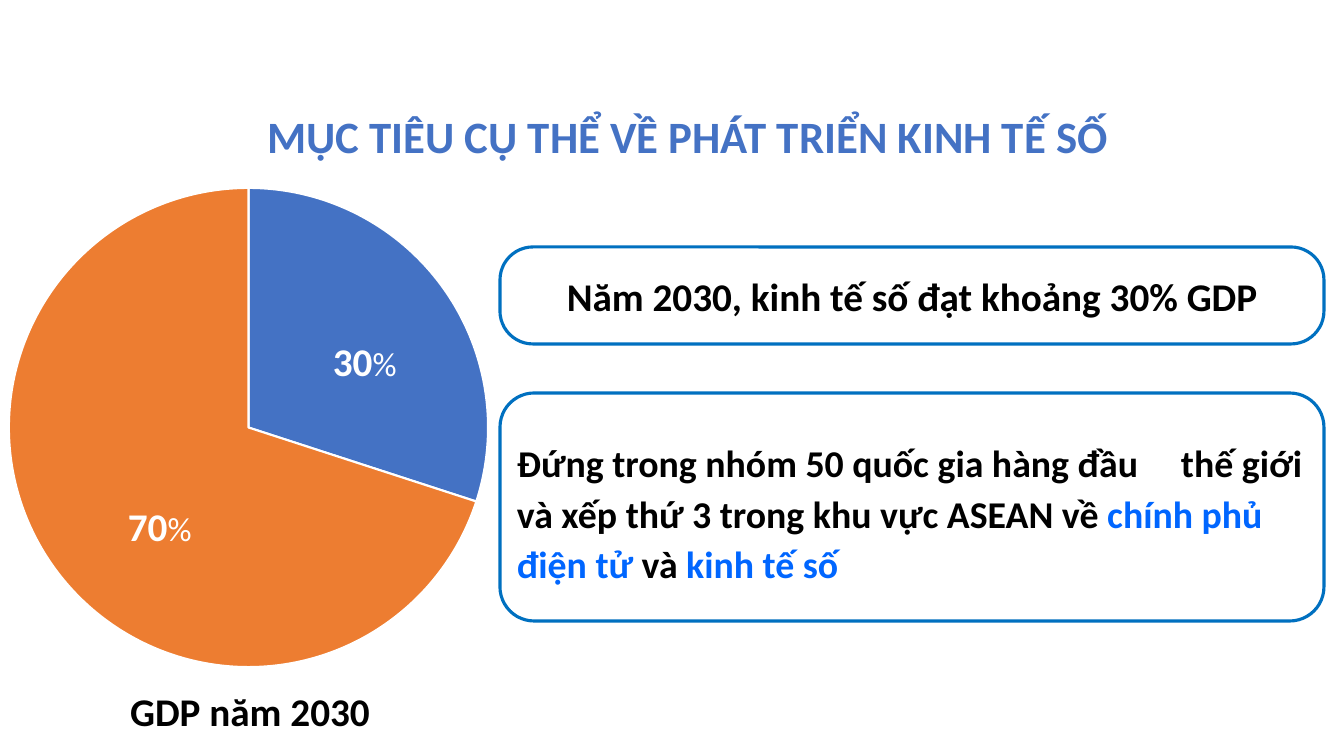
import pptx
import pptx.chart.data
import pptx.dml.color
import pptx.enum.chart
import pptx.enum.shapes
import pptx.enum.text
import pptx.oxml
import pptx.oxml.ns
import pptx.util

HUES = {
    "blue": "4472C4",
    "orange": "ED7D31",
    "edge": "0070C0",
    "link": "0066FF",
    "black": "000000",
    "white": "FFFFFF",
}
SCALE = 914400 / 100.8


def px(count):
    return pptx.util.Emu(round(count * SCALE))


def hue(name):
    return pptx.dml.color.RGBColor.from_string(HUES[name])


class Deck:
    face = "Calibri"

    def __init__(self, wide, high):
        self.show = pptx.Presentation()
        self.show.slide_width = px(wide)
        self.show.slide_height = px(high)
        self.slide = self.show.slides.add_slide(self.show.slide_layouts[6])

    def pie(self, box, parts):
        data = pptx.chart.data.CategoryChartData()
        data.categories = [str(rank + 1) for rank in range(len(parts))]
        data.add_series("Series 1", [value for value, _ in parts])
        kind = pptx.enum.chart.XL_CHART_TYPE.PIE
        chart = self.slide.shapes.add_chart(kind, *map(px, box), data).chart
        chart.has_legend = False
        chart.has_title = False
        chart.font.name = self.face
        chart.font.size = pptx.util.Pt(10)
        chart.font.color.rgb = hue("black")
        plot = chart.plots[0]
        plot.vary_by_categories = True
        for rank, (_, name) in enumerate(parts):
            style = plot.series[0].points[rank].format
            style.fill.solid()
            style.fill.fore_color.rgb = hue(name)
            style.line.color.rgb = hue("white")
            style.line.width = pptx.util.Pt(1.5)

    def frame(self, box, bend):
        kind = pptx.enum.shapes.MSO_SHAPE.ROUNDED_RECTANGLE
        shape = self.slide.shapes.add_shape(kind, *map(px, box))
        shape.adjustments[0] = bend
        shape.shadow.inherit = False
        shape.fill.background()
        shape.line.color.rgb = hue("edge")
        shape.line.width = pptx.util.Pt(2.25)

    def text(self, box, runs, size=28, align="CENTER", lead=None, tab=None):
        frame = self.slide.shapes.add_textbox(*map(px, box)).text_frame
        frame.word_wrap = True
        frame.auto_size = pptx.enum.text.MSO_AUTO_SIZE.SHAPE_TO_FIT_TEXT
        para = frame.paragraphs[0]
        para.alignment = pptx.enum.text.PP_ALIGN[align]
        if lead:
            para.line_spacing = pptx.util.Pt(lead)
        if tab:
            props = para._p.get_or_add_pPr()
            stops = pptx.oxml.parse_xml(
                f'<a:tabLst {pptx.oxml.ns.nsdecls("a")}>'
                f'<a:tab pos="{px(tab)}" algn="l"/></a:tabLst>'
            )
            props.append(stops)
        para.font.name = self.face
        para.font.size = pptx.util.Pt(size)
        para.font.bold = True
        for words, name in runs:
            run = para.add_run()
            run.text = words
            run.font.color.rgb = hue(name)
        return para

    def share(self, left, top, value):
        runs = [(str(value), "white"), ("%", "white")]
        para = self.text((left, top, 106, 57), runs, align="LEFT")
        sign = para.runs[1].font
        sign.size = pptx.util.Pt(24)
        sign.bold = False


def main():
    deck = Deck(1344, 756)
    deck.pie((-331, 174, 1159, 507), [(30, "blue"), (70, "orange")])
    deck.share(323, 332, 30)
    deck.share(118, 497, 70)
    title = "MỤC TIÊU CỤ THỂ VỀ PHÁT TRIỂN KINH TẾ SỐ"
    deck.text((118, 102, 1140, 65), [(title, "blue")], size=32, lead=40)
    deck.text((93, 682, 314, 57), [("GDP năm 2030", "black")])
    deck.frame((500, 247, 824, 97), 0.34)
    goal = "Năm 2030, kinh tế số đạt khoảng 30% GDP"
    deck.text((500, 267, 824, 57), [(goal, "black")])
    deck.frame((500, 393, 824, 228), 0.15)
    rank = [
        ("Đứng trong nhóm 50 quốc gia hàng đầu\tthế giới "
         "và xếp thứ 3 trong khu vực ASEAN về ", "black"),
        ("chính phủ điện tử ", "link"),
        ("và", "black"),
        (" kinh tế số", "link"),
    ]
    deck.text((507, 430, 834, 163), rank, size=27, align="LEFT", lead=36, tab=664)
    deck.show.save("out.pptx")


if __name__ == "__main__":
    main()
